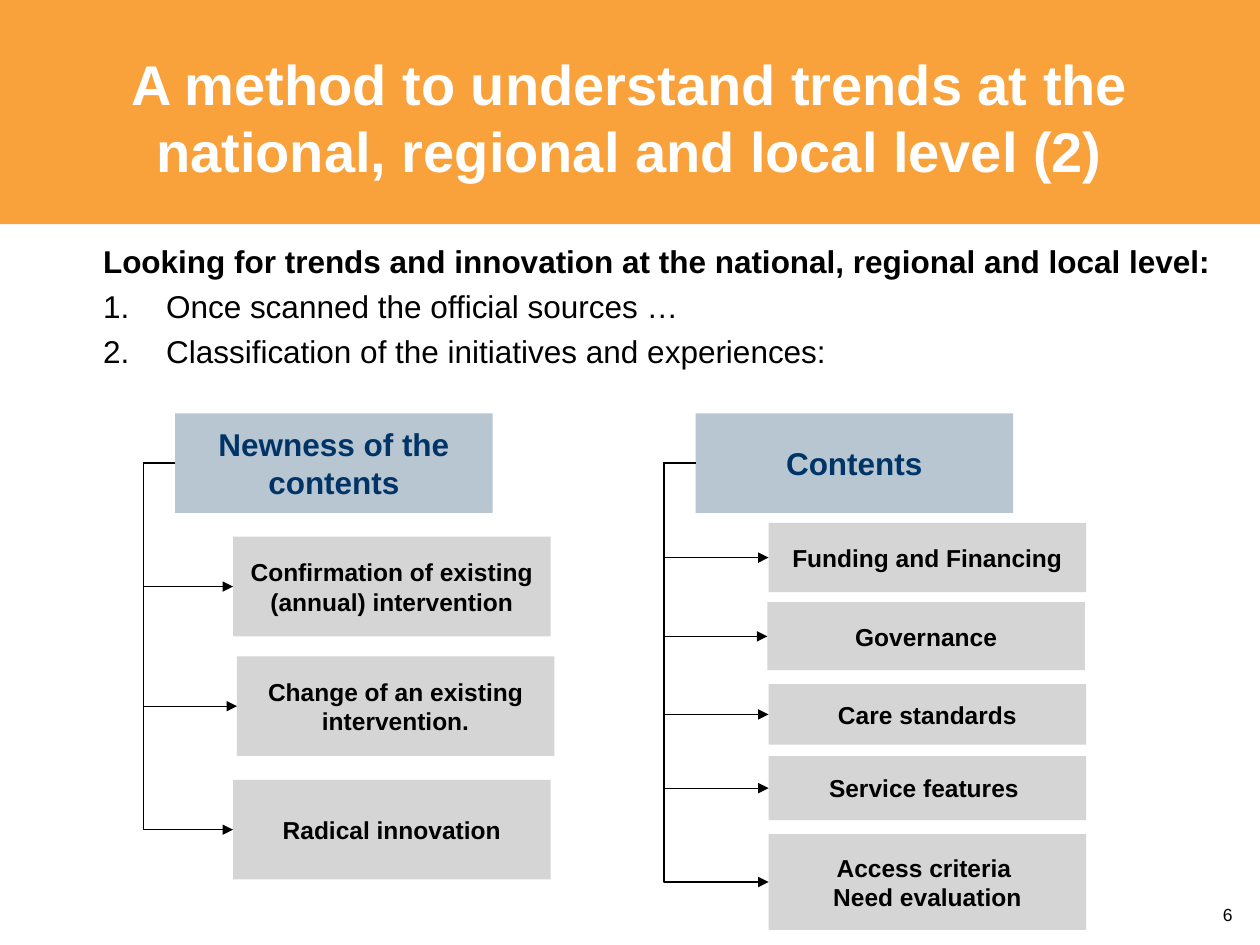
from dataclasses import dataclass

import pptx
import pptx.dml.color
import pptx.enum.shapes
import pptx.enum.text
import pptx.oxml
import pptx.oxml.ns
import pptx.util
from pptx.presentation import Presentation
from pptx.shapes.autoshape import Shape
from pptx.slide import Slide

RGBColor = pptx.dml.color.RGBColor
ORANGE = RGBColor(0xF9, 0xA1, 0x3A)
BLUE_GREY = RGBColor(0xB7, 0xC6, 0xD1)
GREY = RGBColor(0xD5, 0xD5, 0xD5)
NAVY = RGBColor(0x00, 0x33, 0x66)
BLACK = RGBColor(0, 0, 0)
WHITE = RGBColor(255, 255, 255)

FONT = "Arial"
SLIDE_WIDTH = pptx.util.Inches(10)
SLIDE_HEIGHT = pptx.util.Inches(7.5)
COLUMN = SLIDE_WIDTH / 100
ROW = SLIDE_HEIGHT / 75
BOX_COLUMNS = 25.2
HEADING_ROWS = 7.9
HEADING_TOP = 32.8
TRUNK_OFFSET = 2.5

LEFT = pptx.enum.text.PP_ALIGN.LEFT
CENTER = pptx.enum.text.PP_ALIGN.CENTER
RIGHT = pptx.enum.text.PP_ALIGN.RIGHT
TOP = pptx.enum.text.MSO_ANCHOR.TOP
MIDDLE = pptx.enum.text.MSO_ANCHOR.MIDDLE
LEFT_SIDE = 1


@dataclass(frozen=True)
class Area:
    column: float
    row: float
    columns: float
    rows: float

    def lengths(self) -> tuple[int, int, int, int]:
        return (round(self.column * COLUMN), round(self.row * ROW),
                round(self.columns * COLUMN), round(self.rows * ROW))


@dataclass(frozen=True)
class TextStyle:
    size: int
    color: RGBColor = BLACK
    bold: bool = False
    alignment: pptx.enum.text.PP_ALIGN = CENTER


@dataclass(frozen=True)
class Branch:
    text: str
    column: float
    row: float
    rows: float = HEADING_ROWS


@dataclass(frozen=True)
class Tree:
    heading: str
    column: float
    branches: tuple[Branch, ...]


TITLE_STYLE = TextStyle(32, WHITE, True)
LEAD_STYLE = TextStyle(18, bold=True, alignment=LEFT)
STEP_STYLE = TextStyle(18, alignment=LEFT)
HEADING_STYLE = TextStyle(18, NAVY, True)
BRANCH_STYLE = TextStyle(14, bold=True)
NUMBER_STYLE = TextStyle(10, alignment=RIGHT)

STEPS = (
    "Once scanned the official sources …",
    "Classification of the initiatives and experiences:",
)
TREES = (
    Tree("Newness of the contents", 13.9, (
        Branch("Confirmation of existing (annual) intervention", 18.5, 42.6),
        Branch("Change of an existing intervention.", 18.8, 52.1),
        Branch("Radical innovation", 18.5, 61.9),
    )),
    Tree("Contents", 55.2, (
        Branch("Funding and Financing", 61, 41.5, 5.5),
        Branch("Governance", 60.9, 47.8, 5.4),
        Branch("Care standards", 61, 54.3, 4.8),
        Branch("Service features ", 61, 60, 5.1),
        Branch("Access criteria \nNeed evaluation", 61, 66.2, 7.6),
    )),
)


def style_paragraph(paragraph, style: TextStyle) -> None:
    paragraph.alignment = style.alignment
    paragraph.font.name = FONT
    paragraph.font.size = pptx.util.Pt(style.size)
    paragraph.font.bold = style.bold
    paragraph.font.color.rgb = style.color


def add_text(slide: Slide, area: Area, text: str, style: TextStyle, anchor=MIDDLE) -> Shape:
    shape = slide.shapes.add_textbox(*area.lengths())
    frame = shape.text_frame
    frame.word_wrap = True
    frame.vertical_anchor = anchor
    frame.text = text
    style_paragraph(frame.paragraphs[0], style)
    return shape


def add_rectangle(slide: Slide, area: Area, fill: RGBColor) -> Shape:
    shape = slide.shapes.add_shape(
        pptx.enum.shapes.MSO_SHAPE.RECTANGLE, *area.lengths())
    shape.shadow.inherit = False
    shape.fill.solid()
    shape.fill.fore_color.rgb = fill
    shape.line.fill.background()
    return shape


def add_box(slide: Slide, area: Area, text: str, fill: RGBColor, style: TextStyle) -> Shape:
    shape = add_rectangle(slide, area, fill)
    frame = shape.text_frame
    frame.word_wrap = True
    frame.vertical_anchor = MIDDLE
    frame.margin_left = frame.margin_right = pptx.util.Inches(0.08)
    frame.margin_top = frame.margin_bottom = 0
    frame.text = text
    for paragraph in frame.paragraphs:
        style_paragraph(paragraph, style)
    return shape


def add_elbow_arrow(slide: Slide, start: Shape, end: Shape) -> None:
    connector = slide.shapes.add_connector(
        pptx.enum.shapes.MSO_CONNECTOR.ELBOW,
        start.left, start.top + start.height // 2,
        end.left, end.top + end.height // 2)
    connector.begin_connect(start, LEFT_SIDE)
    connector.end_connect(end, LEFT_SIDE)
    connector.line.color.rgb = BLACK
    connector.line.width = pptx.util.Pt(0.75)
    properties = connector._element.spPr
    bend = round(-TRUNK_OFFSET * COLUMN / connector.width * 100000)
    guides = properties.find(pptx.oxml.ns.qn("a:prstGeom")).get_or_add_avLst()
    add_element(guides, "a:gd", name="adj1", fmla=f"val {bend}")
    add_element(connector.line._get_or_add_ln(), "a:tailEnd", type="triangle")
    add_element(properties, "a:effectLst")


def add_element(parent, tag: str, **attributes: str) -> None:
    element = pptx.oxml.parse_xml(f"<{tag} {pptx.oxml.ns.nsdecls('a')}/>")
    for name, value in attributes.items():
        element.set(name, value)
    parent.append(element)


def add_introduction(slide: Slide) -> None:
    shape = add_text(
        slide, Area(7.2, 18.7, 90, 13),
        "Looking for trends and innovation at the national, regional and local level:",
        LEAD_STYLE, TOP)
    indent = pptx.util.Inches(0.5)
    for step in STEPS:
        paragraph = shape.text_frame.add_paragraph()
        paragraph.text = step
        paragraph.space_before = pptx.util.Pt(4.3)
        properties = paragraph._p.get_or_add_pPr()
        properties.set("marL", str(indent))
        properties.set("indent", str(-indent))
        add_element(properties, "a:buAutoNum", type="arabicPeriod")
        style_paragraph(paragraph, STEP_STYLE)


def add_tree(slide: Slide, tree: Tree) -> None:
    heading = add_box(
        slide, Area(tree.column, HEADING_TOP, BOX_COLUMNS, HEADING_ROWS),
        tree.heading, BLUE_GREY, HEADING_STYLE)
    for branch in tree.branches:
        area = Area(branch.column, branch.row, BOX_COLUMNS, branch.rows)
        box = add_box(slide, area, branch.text, GREY, BRANCH_STYLE)
        add_elbow_arrow(slide, heading, box)


def main() -> None:
    presentation: Presentation = pptx.Presentation()
    presentation.slide_width = SLIDE_WIDTH
    presentation.slide_height = SLIDE_HEIGHT
    slide = presentation.slides.add_slide(presentation.slide_layouts[6])
    add_rectangle(slide, Area(0, 0, 100, 17.8), ORANGE)
    add_text(slide, Area(5, 3, 90, 12.5),
             "A method to understand trends at the national, regional and local level (2)",
             TITLE_STYLE)
    add_introduction(slide)
    for tree in TREES:
        add_tree(slide, tree)
    add_text(slide, Area(84.4, 71.4, 14.4, 2.4), "6", NUMBER_STYLE)
    presentation.save("out.pptx")


if __name__ == "__main__":
    main()
